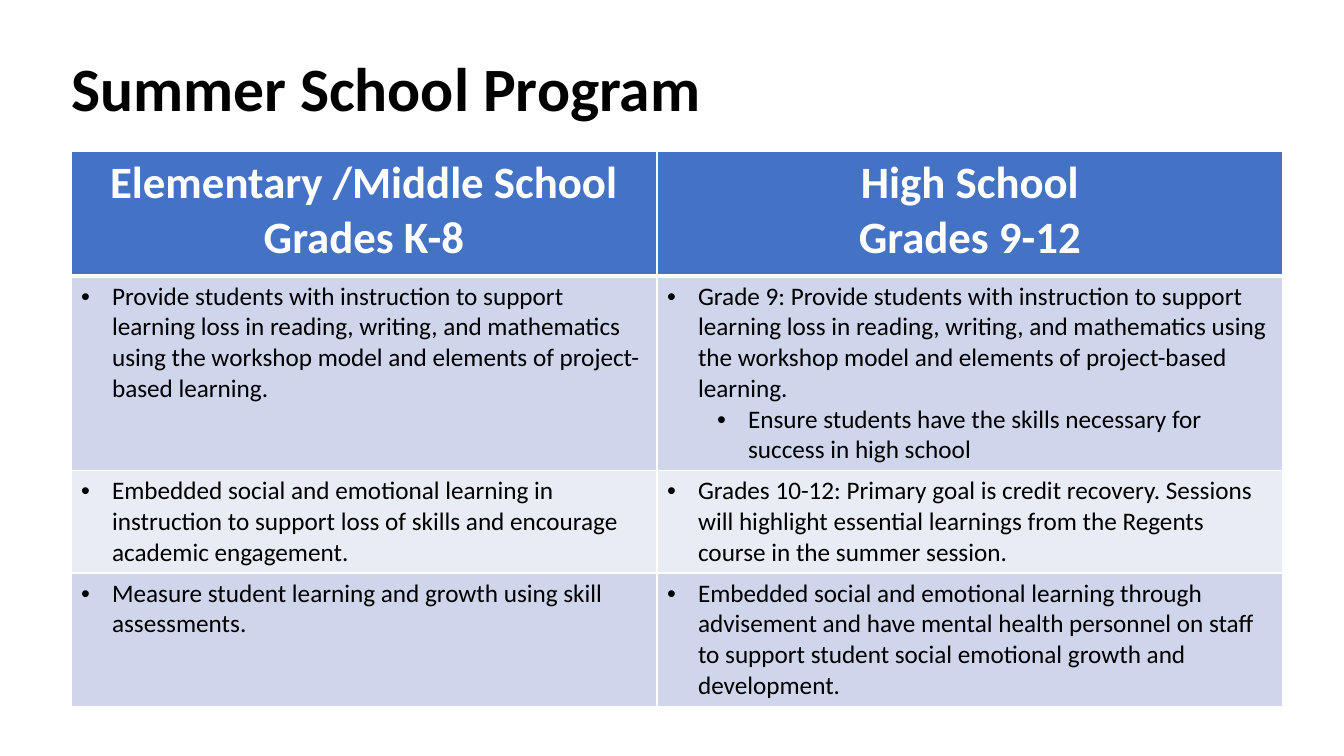
import pptx
import pptx.util
import pptx.dml.color
import pptx.enum.text
import pptx.oxml
import pptx.oxml.ns

TITLE = "Summer School Program"
HEADINGS = [
    ["Elementary /Middle School", "Grades K-8"],
    ["High School", "Grades 9-12"],
]
GOALS = [
    [
        [(0, "Provide students with instruction to support learning loss in reading, writing, "
             "and mathematics using the workshop model and elements of project-based learning.")],
        [(0, "Grade 9: Provide students with instruction to support learning loss in reading, writing, "
             "and mathematics using the workshop model and elements of project-based learning."),
         (1, "Ensure students have the skills necessary for success in high school")],
    ],
    [
        [(0, "Embedded social and emotional learning in instruction to support loss of skills "
             "and encourage academic engagement.")],
        [(0, "Grades 10-12: Primary goal is credit recovery. Sessions will highlight essential "
             "learnings from the Regents course in the summer session.")],
    ],
    [
        [(0, "Measure student learning and growth using skill assessments.")],
        [(0, "Embedded social and emotional learning through advisement and have mental health "
             "personnel on staff to support student social emotional growth and development.")],
    ],
]

SLIDE_SIZE = (1344, 756)
TITLE_BOX = (61, 19, 1159, 146)
TABLE_LEFT, TABLE_TOP = 71, 151
COLUMN_WIDTHS = [586, 626]
ROW_HEIGHTS = [125, 186, 98, 128]
BULLET_INDENT, LEVEL_STEP = 31, 50
FONT = "Calibri"
BLACK, WHITE = "000000", "FFFFFF"
HEADER_FILL = "4472C4"
BAND_FILLS = ["CFD5EA", "E9EBF5"]


def px(length):
    """Turn px into EMU."""
    return pptx.util.Emu(round(length * 914400 / 100.8))


def rgb(value):
    """Turn a hex string into a colour."""
    return pptx.dml.color.RGBColor.from_string(value)


def set_font(paragraph, size, color, bold):
    """Set the font of a whole paragraph."""
    font = paragraph.font
    font.name, font.size, font.bold = FONT, pptx.util.Pt(size), bold
    font.color.rgb = rgb(color)


def add_child(parent, xml):
    """Append an element of the drawing namespace."""
    tag, rest = xml.split(" ", 1)
    parent.append(pptx.oxml.parse_xml(f"<a:{tag} {pptx.oxml.ns.nsdecls('a')} {rest}"))


def style_cell(cell, fill, bottom):
    """Give a cell its white borders and its fill."""
    properties = cell._tc.get_or_add_tcPr()
    for side, width in [("L", 1), ("R", 1), ("T", 1), ("B", bottom)]:
        add_child(properties, f'ln{side} w="{pptx.util.Pt(width)}"><a:solidFill>'
                              f'<a:srgbClr val="{WHITE}"/></a:solidFill></a:ln{side}>')
    cell.fill.solid()
    cell.fill.fore_color.rgb = rgb(fill)


def add_bullet(paragraph, level):
    """Make a paragraph a bullet with a hanging indent."""
    paragraph.level = level
    properties = paragraph._p.get_or_add_pPr()
    properties.set("marL", str(px(BULLET_INDENT + level * LEVEL_STEP)))
    properties.set("indent", str(px(-BULLET_INDENT)))
    add_child(properties, 'buFont typeface="Arial"/>')
    add_child(properties, 'buChar char="•"/>')


def add_title(slide):
    """Place and format the title."""
    title = slide.shapes.title
    title.left, title.top, title.width, title.height = map(px, TITLE_BOX)
    title.text_frame.text = TITLE
    title.text_frame.vertical_anchor = pptx.enum.text.MSO_ANCHOR.MIDDLE
    heading = title.text_frame.paragraphs[0]
    heading.alignment = pptx.enum.text.PP_ALIGN.LEFT
    heading.line_spacing = 0.9
    set_font(heading, 44, BLACK, True)


def add_program(slide):
    """Add the table of school levels and their goals."""
    program = slide.shapes.add_table(
        len(ROW_HEIGHTS), len(COLUMN_WIDTHS), px(TABLE_LEFT), px(TABLE_TOP),
        px(sum(COLUMN_WIDTHS)), px(sum(ROW_HEIGHTS))).table
    for column, width in zip(program.columns, COLUMN_WIDTHS):
        column.width = px(width)
    for row, height in zip(program.rows, ROW_HEIGHTS):
        row.height = px(height)

    for column, lines in enumerate(HEADINGS):
        cell = program.cell(0, column)
        style_cell(cell, HEADER_FILL, 3)
        cell.text_frame.text = "\n".join(lines)
        for paragraph in cell.text_frame.paragraphs:
            paragraph.alignment = pptx.enum.text.PP_ALIGN.CENTER
            set_font(paragraph, 32, WHITE, True)

    for row, goals in enumerate(GOALS):
        for column, bullets in enumerate(goals):
            cell = program.cell(row + 1, column)
            style_cell(cell, BAND_FILLS[row % 2], 1)
            cell.text_frame.text = "\n".join(text for _, text in bullets)
            for paragraph, (level, _) in zip(cell.text_frame.paragraphs, bullets):
                add_bullet(paragraph, level)
                set_font(paragraph, 18, BLACK, False)


def main():
    """Build the slide and save it."""
    deck = pptx.Presentation()
    deck.slide_width, deck.slide_height = map(px, SLIDE_SIZE)
    slide = deck.slides.add_slide(deck.slide_layouts[5])
    add_title(slide)
    add_program(slide)
    deck.save("out.pptx")


if __name__ == "__main__":
    main()
